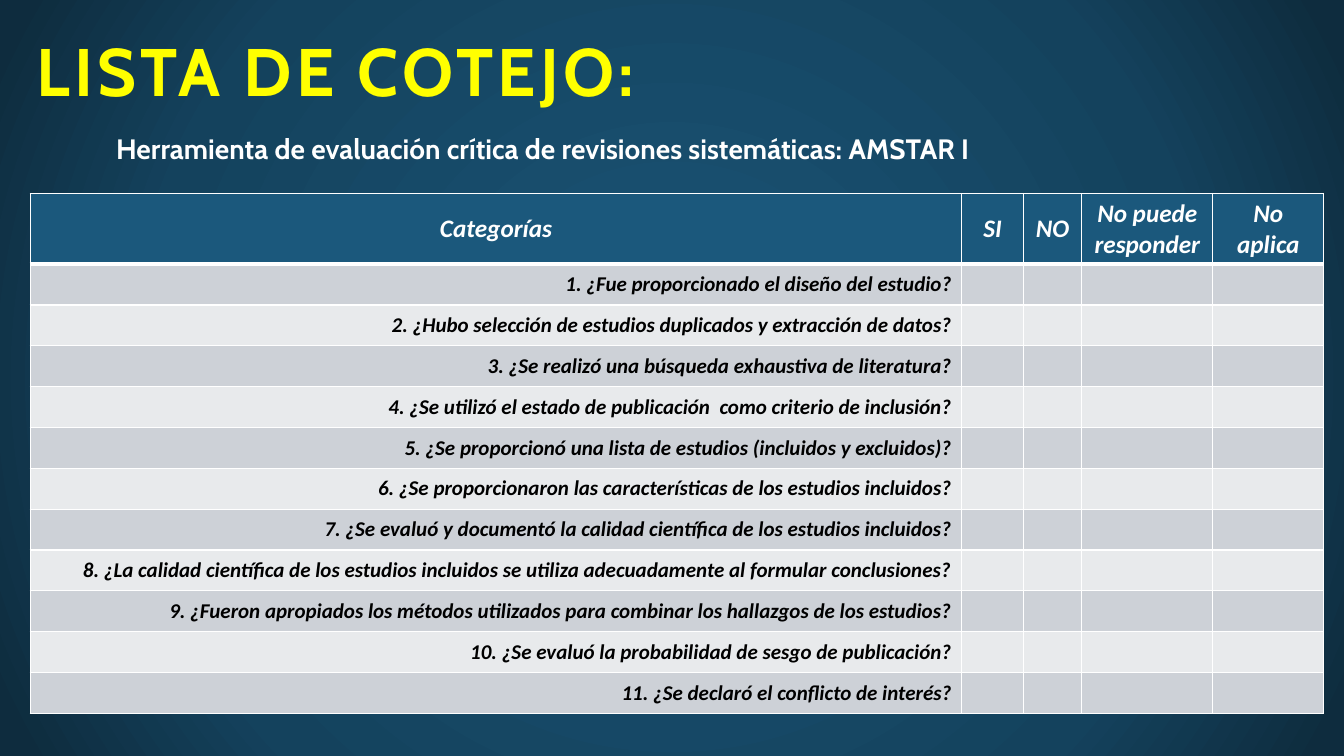
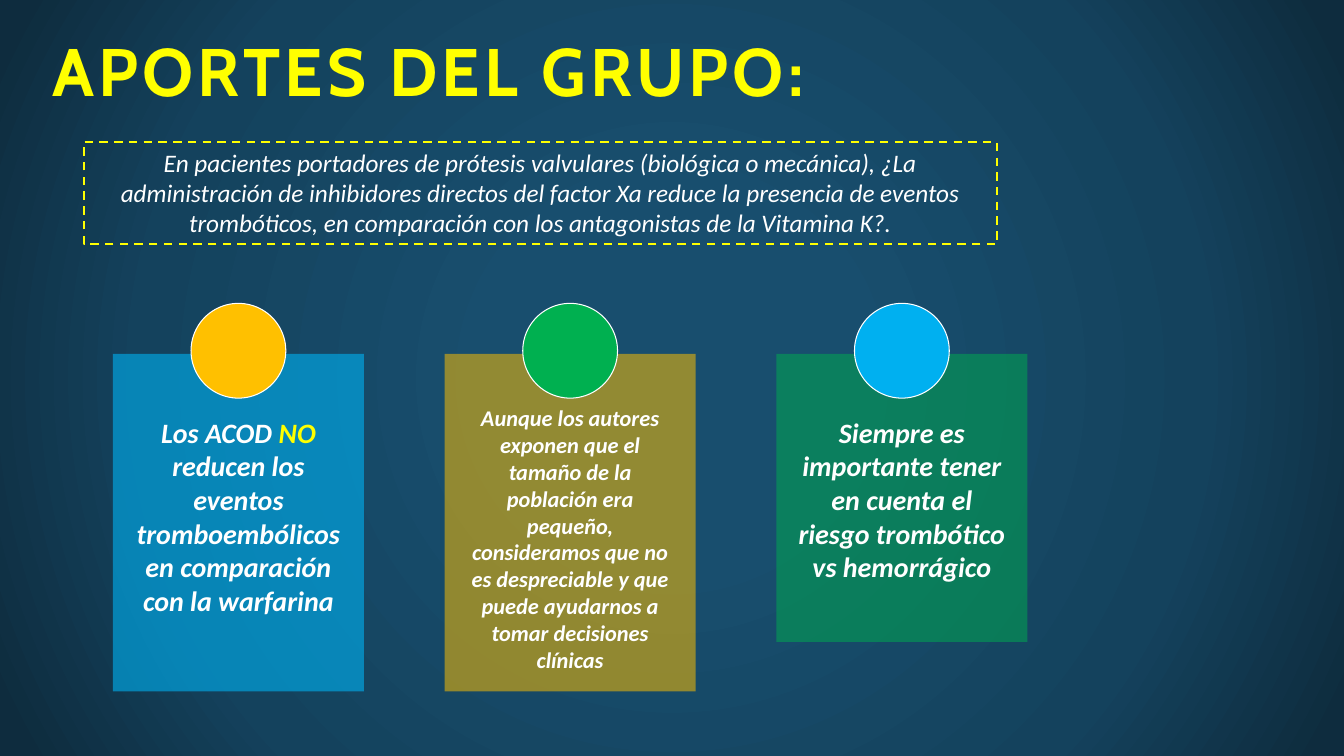
import lxml.etree
import pptx
import pptx.dml.color
import pptx.enum.dml
import pptx.enum.shapes
import pptx.enum.text
import pptx.oxml
import pptx.oxml.ns
import pptx.util

Inches = pptx.util.Inches
Pt = pptx.util.Pt
ALIGN = pptx.enum.text.PP_ALIGN
ANCHOR = pptx.enum.text.MSO_ANCHOR
SHAPE = pptx.enum.shapes.MSO_SHAPE
qn = pptx.oxml.ns.qn

YELLOW, WHITE, BLACK = "FFFF00", "FFFFFF", "000000"
AMBER, GREEN, SKY = "FFC000", "00B050", "00B0F0"
HEADER_BLUE = "1B587C"
BANDS = ("CDD1D7", "E8EAEC")
BACKGROUND_STOPS = ((0, "184E6E"), (23, "184E6E"), (69, "14425D"), (97, "0E2C3E"))
HEADING_FONT, BODY_FONT = "Cabin", "Calibri"

CHECKLIST_HEADERS = ("Categorías", "SI", "NO", "No puede responder", "No aplica")
CHECKLIST_WIDTHS = (9.24, 0.61, 0.58, 1.3, 1.1)
CHECKLIST_QUESTIONS = (
    "1. ¿Fue proporcionado el diseño del estudio?",
    "2. ¿Hubo selección de estudios duplicados y extracción de datos?",
    "3. ¿Se realizó una búsqueda exhaustiva de literatura?",
    "4. ¿Se utilizó el estado de publicación  como criterio de inclusión?",
    "5. ¿Se proporcionó una lista de estudios (incluidos y excluidos)?",
    "6. ¿Se proporcionaron las características de los estudios incluidos?",
    "7. ¿Se evaluó y documentó la calidad científica de los estudios incluidos?",
    "8. ¿La calidad científica de los estudios incluidos se utiliza adecuadamente al formular conclusiones?",
    "9. ¿Fueron apropiados los métodos utilizados para combinar los hallazgos de los estudios?",
    "10. ¿Se evaluó la probabilidad de sesgo de publicación?",
    "11. ¿Se declaró el conflicto de interés?",
)

RESEARCH_QUESTION = (
    "En pacientes portadores de prótesis valvulares (biológica o mecánica), ¿La "
    "administración de inhibidores directos del factor Xa reduce la presencia de eventos "
    "trombóticos, en comparación con los antagonistas de la Vitamina K?."
)
# Card fill, opacity, circle fill, card height, text offset, text size, runs
CARDS = (
    (SKY, 61, AMBER, 3.35, 0.51, 20, (
        ("Los ACOD ", WHITE),
        ("NO ", YELLOW),
        ("reducen los eventos tromboembólicos en comparación con la warfarina", WHITE),
    )),
    (AMBER, 53, GREEN, 3.35, 0.4, 16, (
        ("Aunque los autores exponen que el tamaño de la población era pequeño, "
         "consideramos que no es despreciable y que puede ayudarnos a tomar decisiones "
         "clínicas", WHITE),
    )),
    (GREEN, 50, SKY, 2.86, 0.51, 20, (
        ("Siempre es importante tener en cuenta el riesgo trombótico vs hemorrágico", WHITE),
    )),
)


def rgb(color):
    return pptx.dml.color.RGBColor.from_string(color)


def inches(*lengths):
    return [Inches(length) for length in lengths]


def add_run(paragraph, text, size, color, font=BODY_FONT, bold=False, italic=False):
    run = paragraph.add_run()
    run.text = text
    run.font.name = font
    run.font.size = Pt(size)
    run.font.bold = bold
    run.font.italic = italic
    run.font.color.rgb = rgb(color)
    return run


def first_paragraph(text_frame, alignment=ALIGN.CENTER, anchor=ANCHOR.TOP):
    text_frame.word_wrap = True
    text_frame.vertical_anchor = anchor
    paragraph = text_frame.paragraphs[0]
    paragraph.alignment = alignment
    return paragraph


def add_plain_shape(slide, preset, box, fill=None, opacity=100, line=None, line_width=0.75):
    shape = slide.shapes.add_shape(preset, *inches(*box))
    shape.shadow.inherit = False
    if fill:
        shape.fill.solid()
        shape.fill.fore_color.rgb = rgb(fill)
        if opacity < 100:
            color = shape.fill._xPr.find(".//" + qn("a:srgbClr"))
            lxml.etree.SubElement(color, qn("a:alpha")).set("val", str(opacity * 1000))
    else:
        shape.fill.background()
    if line:
        shape.line.color.rgb = rgb(line)
        shape.line.width = Pt(line_width)
    else:
        shape.line.fill.background()
    return shape


def set_radial_background(master):
    master.background.fill.solid()
    properties = master.element.find(".//" + qn("p:bgPr"))
    stops = "".join(
        f'<a:gs pos="{position * 1000}"><a:srgbClr val="{color}"/></a:gs>'
        for position, color in BACKGROUND_STOPS
    )
    gradient = pptx.oxml.parse_xml(
        f'<a:gradFill {pptx.oxml.ns.nsdecls("a")} rotWithShape="1"><a:gsLst>{stops}</a:gsLst>'
        '<a:path path="circle"><a:fillToRect l="50000" t="50000" r="50000" b="50000"/></a:path>'
        '</a:gradFill>'
    )
    properties.replace(properties.find(qn("a:solidFill")), gradient)


def add_titled_slide(presentation, title_text, title_width):
    slide = presentation.slides.add_slide(presentation.slide_layouts[5])
    title = slide.shapes.title
    title.left, title.top, title.width, title.height = inches(0.18, 0.28, title_width, 0.83)
    title.text_frame.auto_size = pptx.enum.text.MSO_AUTO_SIZE.NONE
    paragraph = first_paragraph(title.text_frame, anchor=ANCHOR.MIDDLE)
    run = add_run(paragraph, title_text, 48, YELLOW, HEADING_FONT, bold=True)
    run.font._element.set("spc", "300")
    return slide


def set_cell_borders(cell, top, bottom):
    """Draw white borders; the side borders are 1 point wide."""
    properties = cell._tc.get_or_add_tcPr()
    widths = (("L", 1), ("R", 1), ("T", top), ("B", bottom))
    for index, (side, width) in enumerate(widths):
        properties.insert(index, pptx.oxml.parse_xml(
            f'<a:ln{side} {pptx.oxml.ns.nsdecls("a")} w="{Pt(width)}">'
            f'<a:solidFill><a:srgbClr val="{WHITE}"/></a:solidFill></a:ln{side}>'
        ))


def add_checklist(slide, left, top, height, header_height=0.7):
    rows = [CHECKLIST_HEADERS]
    rows += [(question, "", "", "", "") for question in CHECKLIST_QUESTIONS]
    frame = slide.shapes.add_table(
        len(rows), len(CHECKLIST_WIDTHS), *inches(left, top, sum(CHECKLIST_WIDTHS), height))
    table = frame.table
    table.horz_banding = False
    for column, width in zip(table.columns, CHECKLIST_WIDTHS):
        column.width = Inches(width)
    body_height = (height - header_height) / len(CHECKLIST_QUESTIONS)
    for row_index, texts in enumerate(rows):
        is_header = row_index == 0
        table.rows[row_index].height = Inches(header_height if is_header else body_height)
        for column_index, text in enumerate(texts):
            cell = table.cell(row_index, column_index)
            cell.fill.solid()
            cell.fill.fore_color.rgb = rgb(HEADER_BLUE if is_header else BANDS[(row_index - 1) % 2])
            set_cell_borders(cell, 3 if row_index == 1 else 1, 3 if is_header else 1)
            if text:
                cell.vertical_anchor = ANCHOR.MIDDLE
                paragraph = cell.text_frame.paragraphs[0]
                paragraph.alignment = ALIGN.CENTER if is_header else ALIGN.RIGHT
                add_run(paragraph, text, 18 if is_header else 15,
                        WHITE if is_header else BLACK, bold=True, italic=True)


def add_contribution_card(slide, left, top, card):
    fill, opacity, circle_fill, height, text_offset, size, runs = card
    width, diameter, text_width = 2.49, 0.94, 2.27
    add_plain_shape(slide, SHAPE.RECTANGLE, (left, top, width, height), fill, opacity)
    add_plain_shape(slide, SHAPE.OVAL,
                    (left + (width - diameter) / 2, top - 0.5, diameter, diameter),
                    circle_fill, line=WHITE)
    text_box = slide.shapes.add_textbox(*inches(
        left + (width - text_width) / 2, top + text_offset, text_width, height - text_offset))
    frame = text_box.text_frame
    frame.margin_left = frame.margin_right = frame.margin_top = frame.margin_bottom = Inches(0.1)
    paragraph = first_paragraph(frame)
    paragraph.space_after = Pt(16)
    for text, color in runs:
        add_run(paragraph, text, size, color, bold=True, italic=True)


def build_checklist_slide(presentation):
    slide = add_titled_slide(presentation, "LISTA DE COTEJO:", 6.3)
    subtitle = slide.shapes.add_textbox(*inches(0.38, 1.26, 10.01, 0.44))
    add_run(first_paragraph(subtitle.text_frame),
            "Herramienta de evaluación crítica de revisiones sistemáticas: AMSTAR I",
            20, WHITE, HEADING_FONT, bold=True)
    add_checklist(slide, 0.3, 1.92, 5.16)


def build_contributions_slide(presentation):
    slide = add_titled_slide(presentation, "APORTES DEL GRUPO:", 8.14)
    question = add_plain_shape(slide, SHAPE.RECTANGLE, (0.83, 1.41, 9.06, 1.01),
                               line=YELLOW, line_width=1.5)
    question.line.dash_style = pptx.enum.dml.MSO_LINE.DASH
    paragraph = first_paragraph(question.text_frame)
    paragraph.space_after = Pt(8)
    add_run(paragraph, RESEARCH_QUESTION, 18, WHITE, italic=True)
    for index, card in enumerate(CARDS):
        add_contribution_card(slide, 1.12 + 3.29 * index, 3.51, card)


def main():
    presentation = pptx.Presentation()
    presentation.slide_width, presentation.slide_height = inches(13.33, 7.5)
    set_radial_background(presentation.slide_master)
    build_checklist_slide(presentation)
    build_contributions_slide(presentation)
    presentation.save("out.pptx")


if __name__ == "__main__":
    main()
